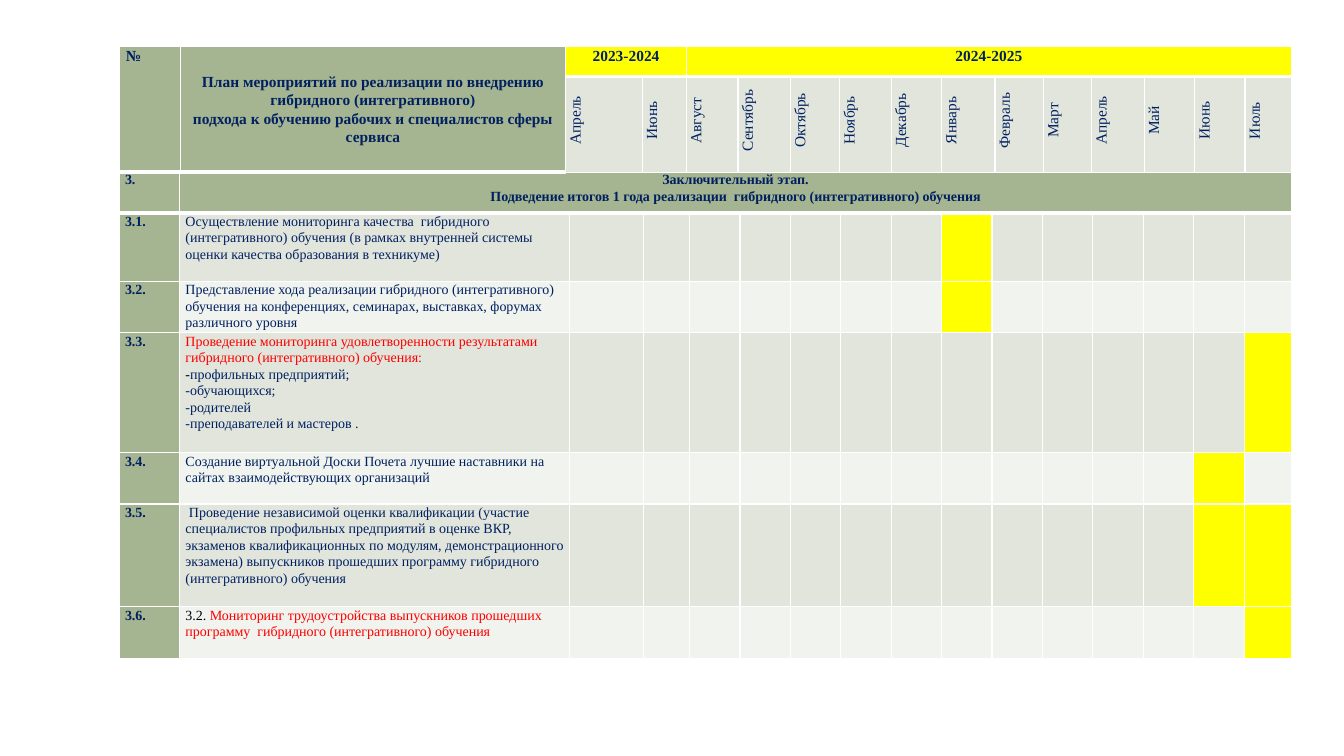
import pptx
import pptx.dml.color
import pptx.enum.text
import pptx.oxml
import pptx.oxml.ns
import pptx.util
from pptx.util import Inches

NAVY, RED, BLACK, WHITE = "002060", "FF0000", "000000", "FFFFFF"
SAGE, YELLOW, DARK_BAND, LIGHT_BAND = "A5B592", "FFFF00", "E1E5DC", "F0F3EE"
CENTER = pptx.enum.text.PP_ALIGN.CENTER
MIDDLE = pptx.enum.text.MSO_ANCHOR.MIDDLE

MONTHS = ["Апрель", "Июнь", "Август", "Сентябрь", "Октябрь", "Ноябрь", "Декабрь",
          "Январь", "Февраль", "Март", "Апрель", "Май", "Июнь", "Июль"]
PLAN_TITLE = ["План мероприятий по реализации по внедрению гибридного (интегративного)",
              "подхода к обучению рабочих и специалистов сферы сервиса"]
STAGE_TITLE = ["Заключительный этап.",
               "Подведение итогов 1 года реализации  гибридного (интегративного) обучения"]

# Number, paragraphs, columns of the months in which the activity takes place
ACTIVITIES = [
    ("3.1.", ["Осуществление мониторинга качества  гибридного (интегративного) обучения "
              "(в рамках внутренней системы оценки качества образования в техникуме)"], [9]),
    ("3.2.", ["Представление хода реализации гибридного (интегративного) обучения на "
              "конференциях, семинарах, выставках, форумах различного уровня"], [9]),
    ("3.3.", [[("Проведение мониторинга удовлетворенности результатами гибридного "
                "(интегративного) обучения:", RED)],
              [("-", BLACK), ("профильных предприятий;", NAVY)],
              "-обучающихся;", "-родителей", "-преподавателей и мастеров ."], [15]),
    ("3.4.", ["Создание виртуальной Доски Почета лучшие наставники на сайтах "
              "взаимодействующих организаций"], [14]),
    ("3.5.", [" Проведение независимой оценки квалификации (участие специалистов "
              "профильных предприятий в оценке ВКР, экзаменов квалификационных по модулям, "
              "демонстрационного экзамена) выпускников прошедших программу гибридного "
              "(интегративного) обучения"], [14, 15]),
    ("3.6.", [[("3.2. ", BLACK),
               ("Мониторинг трудоустройства выпускников прошедших программу  гибридного "
                "(интегративного) обучения", RED)]], [15]),
]


def rgb(color):
    return pptx.dml.color.RGBColor.from_string(color)


def set_attrs(obj, values):
    for name, value in values.items():
        setattr(obj, name, value)


class SlideBuilder:
    font = "Times New Roman"
    line_spacing = 1.07

    def __init__(self, slide):
        self.s = slide

    def table(self, left, top, cols, rows):
        frame = self.s.shapes.add_table(len(rows), len(cols), Inches(left), Inches(top),
                                        Inches(sum(cols)), Inches(sum(rows)))
        table = frame.table
        set_attrs(table, {"first_row": False, "horz_banding": False})
        for col, width in zip(table.columns, cols):
            col.width = Inches(width)
        for row, height in zip(table.rows, rows):
            row.height = Inches(height)
        return table

    def cell(self, cell, fill, inset, bottom=1):
        """Set the fill, the side insets and the white borders of a cell."""
        set_attrs(cell, {"margin_left": Inches(inset), "margin_right": Inches(inset),
                         "margin_top": 0, "margin_bottom": 0})
        tc_pr = cell._tc.get_or_add_tcPr()
        for side, width in {"L": 1, "R": 1, "T": 1, "B": bottom}.items():
            tc_pr.append(pptx.oxml.parse_xml(
                f'<a:ln{side} {pptx.oxml.ns.nsdecls("a")} w="{pptx.util.Pt(width)}">'
                f'<a:solidFill><a:srgbClr val="{WHITE}"/></a:solidFill></a:ln{side}>'))
        cell.fill.solid()
        cell.fill.fore_color.rgb = rgb(fill)

    def text(self, cell, paragraphs, size, bold=False, align=None):
        """Write paragraphs, each a string or a list of (text, colour) runs."""
        tf = cell.text_frame
        for i, runs in enumerate(paragraphs):
            p = tf.add_paragraph() if i else tf.paragraphs[0]
            set_attrs(p, {"alignment": align, "line_spacing": self.line_spacing})
            for words, color in [(runs, NAVY)] if isinstance(runs, str) else runs:
                r = p.add_run()
                r.text = words
                set_attrs(r.font, {"name": self.font, "size": pptx.util.Pt(size), "bold": bold})
                r.font.color.rgb = rgb(color)

    def upright_text(self, cell, words, size):
        """Write one centred line that reads from bottom to top."""
        self.text(cell, [words], size, align=CENTER)
        cell._tc.get_or_add_tcPr().set("vert", "vert270")
        p = cell.text_frame.paragraphs[0]
        p._p.get_or_add_pPr().set("marL", str(Inches(0.08)))


def add_activities(b):
    cols = [0.6, 3.87, 0.73, 0.46] + [0.5] * 11 + [0.47]
    table = b.table(1.18, 1.7, cols, [0.41, 0.68, 0.51, 1.19, 0.51, 1.02, 0.51])
    for col in range(len(cols)):
        b.cell(table.cell(0, col), SAGE, 0.06, bottom=3)
    table.cell(0, 1).merge(table.cell(0, len(cols) - 1))
    b.text(table.cell(0, 0), ["3."], 10, bold=True)
    b.text(table.cell(0, 1), STAGE_TITLE, 10, bold=True, align=CENTER)

    for row, (number, paragraphs, active) in enumerate(ACTIVITIES, 1):
        band = DARK_BAND if row % 2 else LIGHT_BAND
        for col in range(len(cols)):
            fill = SAGE if col == 0 else YELLOW if col in active else band
            b.cell(table.cell(row, col), fill, 0.06)
        b.text(table.cell(row, 0), [number], 10, bold=True)
        b.text(table.cell(row, 1), paragraphs, 10)


def add_calendar_header(b):
    cols = [0.61, 3.82, 0.76, 0.44, 0.51, 0.52, 0.49, 0.51,
            0.5, 0.53, 0.48, 0.48, 0.52, 0.5, 0.5, 0.46]
    table = b.table(1.18, 0.46, cols, [0.3, 0.95])
    for col in range(len(cols)):
        label = col < 2
        b.cell(table.cell(0, col), SAGE if label else YELLOW, 0.07, bottom=3)
        b.cell(table.cell(1, col), SAGE if label else DARK_BAND, 0.07, bottom=3 if label else 1)

    headings = [((0, 0), (1, 0), ["№"], None),
                ((0, 1), (1, 1), PLAN_TITLE, CENTER),
                ((0, 2), (0, 3), ["2023-2024"], CENTER),
                ((0, 4), (0, 15), ["2024-2025"], CENTER)]
    for first, last, paragraphs, align in headings:
        table.cell(*first).merge(table.cell(*last))
        b.text(table.cell(*first), paragraphs, 11, bold=True, align=align)
    table.cell(0, 1).vertical_anchor = MIDDLE
    for col, month in enumerate(MONTHS, 2):
        b.upright_text(table.cell(1, col), month, 11)


def main():
    prs = pptx.Presentation()
    set_attrs(prs, {"slide_width": Inches(13.33), "slide_height": Inches(7.5)})
    b = SlideBuilder(prs.slides.add_slide(prs.slide_layouts[6]))
    add_activities(b)
    add_calendar_header(b)
    prs.save("out.pptx")


if __name__ == "__main__":
    main()
